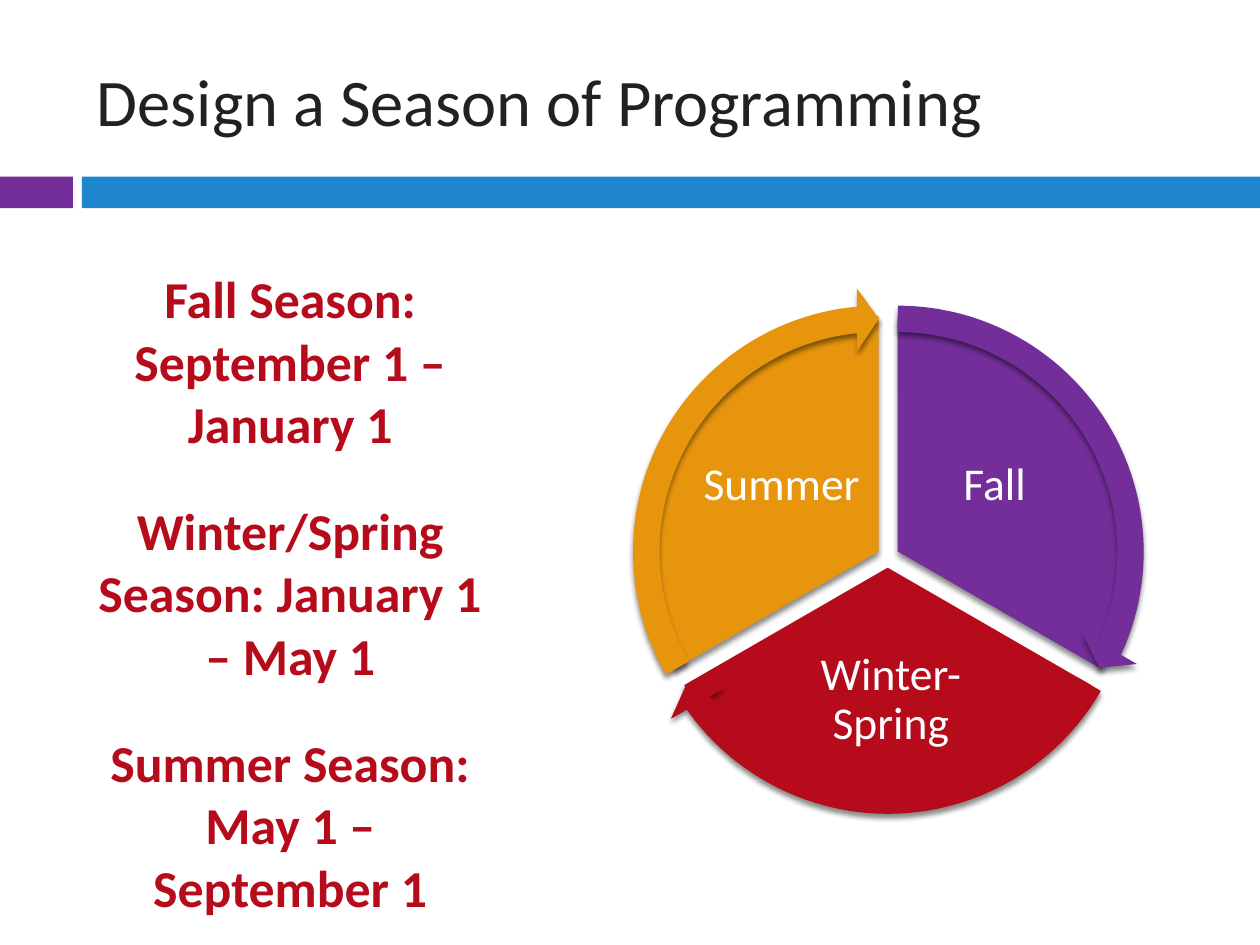
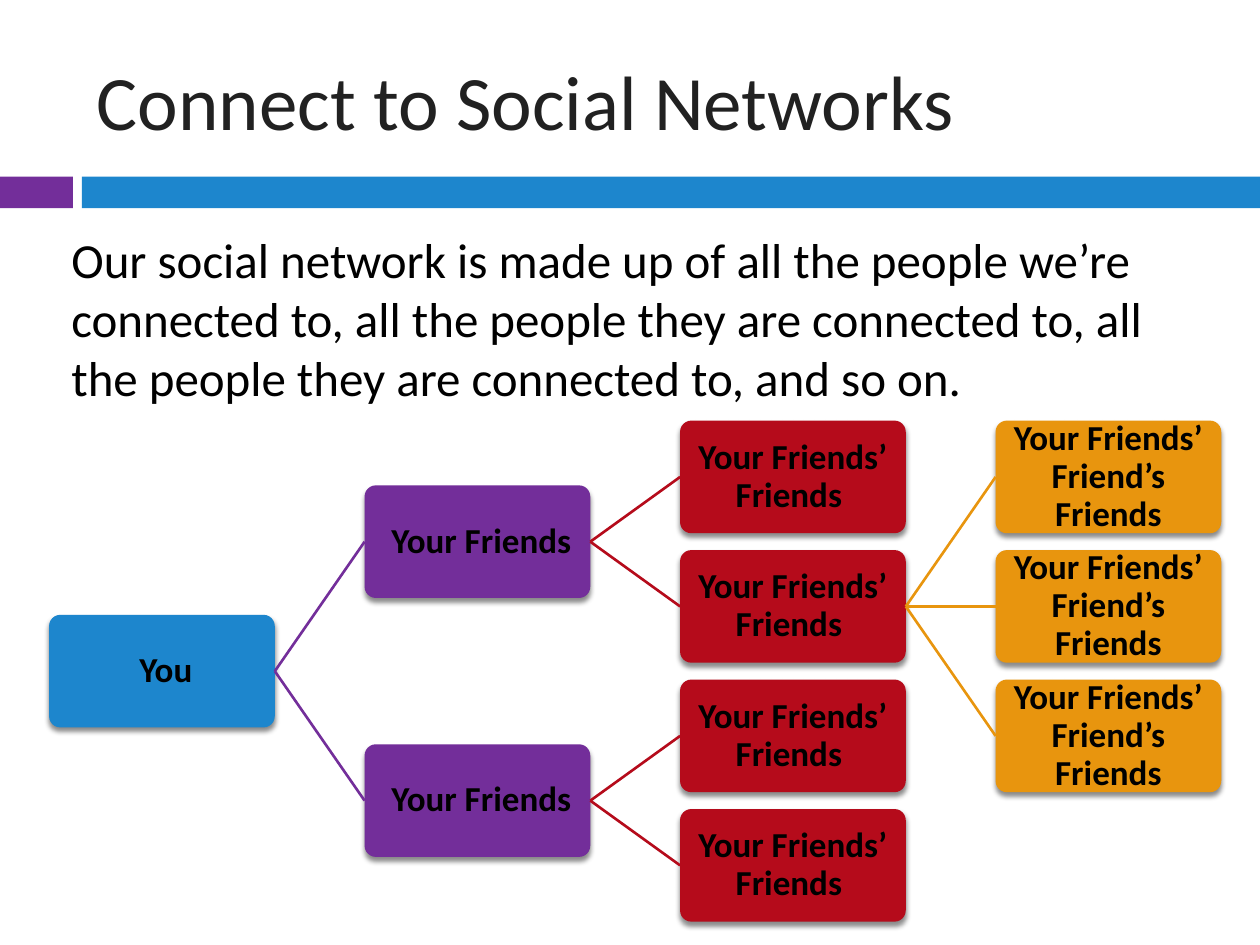
"""Build two slides: a cycle of programming seasons and a tree of social connections."""
import lxml.etree
import pptx
import pptx.dml.color
import pptx.enum.shapes
import pptx.enum.text
import pptx.oxml.ns
import pptx.util

Cm, Pt = pptx.util.Cm, pptx.util.Pt
SHAPE = pptx.enum.shapes.MSO_SHAPE
ALIGN = pptx.enum.text.PP_ALIGN
ANCHOR = pptx.enum.text.MSO_ANCHOR
qn = pptx.oxml.ns.qn

PURPLE, BLUE, RED, GOLD = "732E9A", "1D86CD", "B50B1B", "E8950E"
BLACK, WHITE, CHARCOAL = "000000", "FFFFFF", "212121"
MARGINS = ("margin_left", "margin_top", "margin_right", "margin_bottom")


def paint(fill, colour):
    """Give a shape, line or font fill a solid colour."""
    fill.solid()
    fill.fore_color.rgb = pptx.dml.color.RGBColor.from_string(colour)


def write(shape, texts, colour, font, paragraph, frame):
    """Write one paragraph per text and apply the three dicts of format values."""
    text_frame = shape.text_frame
    text_frame.text = "\n".join(texts)
    targets = [(text_frame, {"word_wrap": True, **frame})]
    for line in text_frame.paragraphs:
        targets += [(line, paragraph), (line.font, {"name": "Calibri", **font})]
        paint(line.font.fill, colour)
    for target, values in targets:
        for name, value in values.items():
            setattr(target, name, value)


presentation = pptx.Presentation()
presentation.slide_width, presentation.slide_height = Cm(25.4), Cm(19.05)

slides = []
for heading, size, width in [
    ("Design a Season of Programming", 38, 23.22),
    ("Connect to Social Networks", 44, 22.66),
]:
    slide = presentation.slides.add_slide(presentation.slide_layouts[5])
    slides.append(slide)
    for left, band_width, colour in [(0, 1.47, PURPLE), (1.65, 23.75, BLUE)]:
        band = slide.shapes.add_shape(
            SHAPE.RECTANGLE, Cm(left), Cm(3.56), Cm(band_width), Cm(0.64))
        paint(band.fill, colour)
        band.line.fill.background()
        band.shadow.inherit = False
    title = slide.shapes.title
    title.left, title.top, title.width, title.height = Cm(1.7), Cm(0.64), Cm(width), Cm(2.74)
    write(title, [heading], CHARCOAL, {"size": Pt(size)},
          {"alignment": ALIGN.LEFT}, {"vertical_anchor": ANCHOR.MIDDLE})
season_slide, network_slide = slides
raised = []

season_dates = season_slide.shapes.add_textbox(Cm(1.7), Cm(5.26), Cm(8.31), Cm(12.88))
write(season_dates,
      ["Fall Season: September 1 – January 1",
       "Winter/Spring Season: January 1 – May 1",
       "Summer Season: May 1 – September 1"],
      RED, {"size": Pt(29.6), "bold": True},
      {"alignment": ALIGN.CENTER, "space_before": Pt(26)}, {})
season_dates.text_frame.paragraphs[0].space_before = Pt(0)

seasons = [
    ("Fall", PURPLE, 13.36, 6.38, 162, 18, (18.36, 8.38, 3.38, 2.82)),
    ("Winter-Spring", RED, 13.16, 6.71, 18, 90, (15.42, 12.88, 5.08, 2.49)),
    ("Summer", GOLD, 12.98, 6.38, 90, 162, (14.07, 8.38, 3.38, 2.82)),
]
for season, colour, left, top, start, end, label_box in seasons:
    wedge = season_slide.shapes.add_shape(SHAPE.PIE, Cm(left), Cm(top), Cm(9.47), Cm(9.47))
    wedge.adjustments[0], wedge.adjustments[1] = start, end
    paint(wedge.fill, colour)
    raised.append(wedge)
    label = season_slide.shapes.add_textbox(*map(Cm, label_box))
    write(label, [season], WHITE, {"size": Pt(26)},
          {"alignment": ALIGN.CENTER, "line_spacing": 0.9},
          {"vertical_anchor": ANCHOR.MIDDLE, **dict.fromkeys(MARGINS, Cm(0.1))})

for season, colour, left, top, start, end, label_box in seasons:
    arrow = season_slide.shapes.add_shape(
        SHAPE.CIRCULAR_ARROW, Cm(left - 0.59), Cm(top - 0.59), Cm(10.66), Cm(10.66))
    for index, value in enumerate([0.05, 3.28, end - 3.28, start, 0.06]):
        arrow.adjustments[index] = value
    paint(arrow.fill, colour)
    raised.append(arrow)

explanation = network_slide.shapes.add_textbox(Cm(1.19), Cm(4.5), Cm(22.86), Cm(3.96))
write(explanation,
      ["Our social network is made up of all the people we’re connected to, "
       "all the people they are connected to, all the people they are connected to, "
       "and so on."],
      BLACK, {"size": Pt(28)}, {"alignment": ALIGN.LEFT}, {})

generations = [
    (" You", BLUE),
    (" Your Friends", PURPLE),
    ("Your Friends’ Friends ", RED),
    ("Your Friends’ Friend’s Friends", GOLD),
]
people = {}
for generation, row, parent in [
    (0, 1.5, None),
    (1, 0.5, (0, 1.5)), (1, 2.5, (0, 1.5)),
    (2, 0, (1, 0.5)), (2, 1, (1, 0.5)), (2, 2, (1, 2.5)), (2, 3, (1, 2.5)),
    (3, 0, (2, 1)), (3, 1, (2, 1)), (3, 2, (2, 1)),
]:
    caption, colour = generations[generation]
    person = network_slide.shapes.add_shape(
        SHAPE.ROUNDED_RECTANGLE,
        Cm(0.99 + 6.36 * generation), Cm(8.48 + 2.61 * row), Cm(4.55), Cm(2.27))
    person.adjustments[0] = 0.1
    paint(person.fill, colour)
    write(person, [caption], BLACK, {"size": Pt(20), "bold": True},
          {"alignment": ALIGN.CENTER, "line_spacing": 0.9},
          {"vertical_anchor": ANCHOR.MIDDLE, **dict.fromkeys(MARGINS, Cm(0.03))})
    people[generation, row] = person
    raised.append(person)
    if parent:
        tie = network_slide.shapes.add_connector(
            pptx.enum.shapes.MSO_CONNECTOR.STRAIGHT, 0, 0, 0, 0)
        tie.begin_connect(people[parent], 3)
        tie.end_connect(person, 1)
        tie.line.width = Pt(1.5)
        paint(tie.line.fill, colour)
        lxml.etree.SubElement(tie.element.spPr, qn("a:effectLst"))

for shape in raised:
    shape.line.fill.background()
    shape.shadow.inherit = False
    effects = shape.element.spPr.find(qn("a:effectLst"))
    shadow = lxml.etree.SubElement(
        effects, qn("a:outerShdw"), blurRad=str(Pt(3)), dist=str(Pt(2.4)),
        dir="5400000", rotWithShape="0")
    shade = lxml.etree.SubElement(shadow, qn("a:srgbClr"), val=BLACK)
    lxml.etree.SubElement(shade, qn("a:alpha"), val="45000")

presentation.save("out.pptx")
